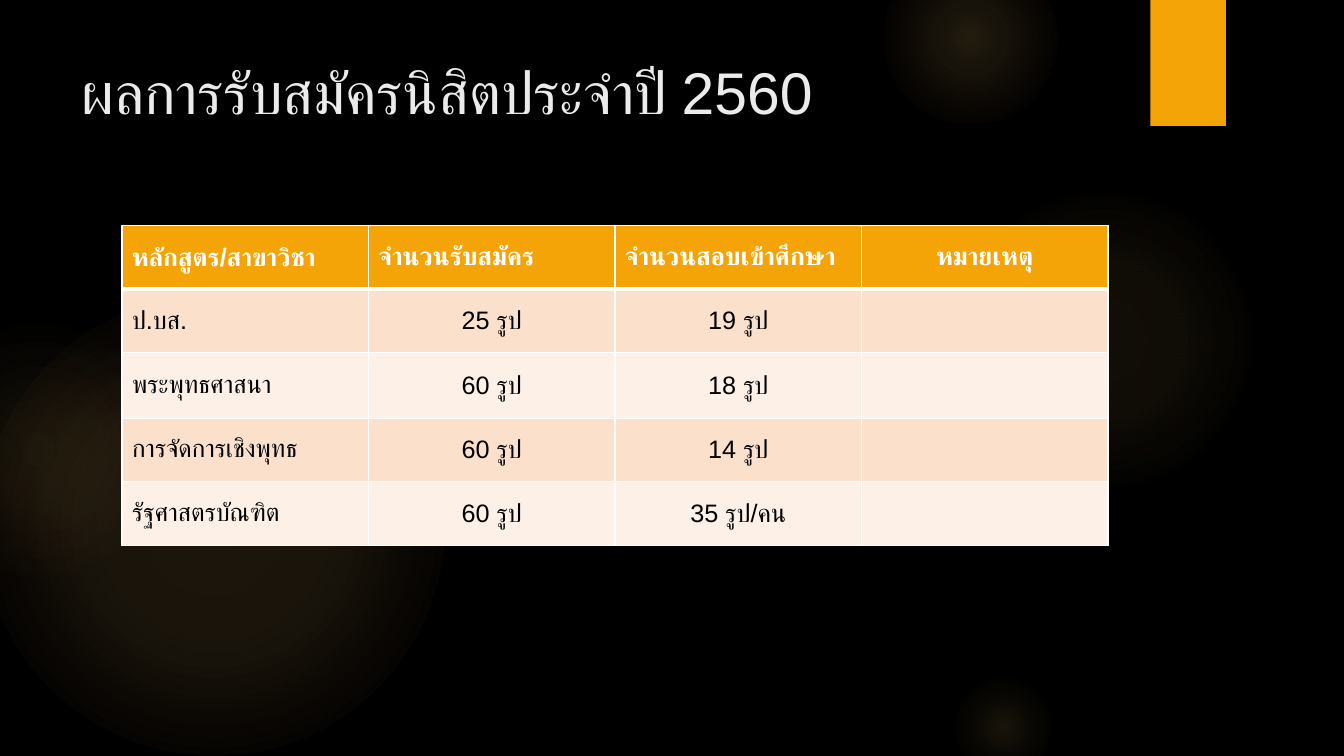
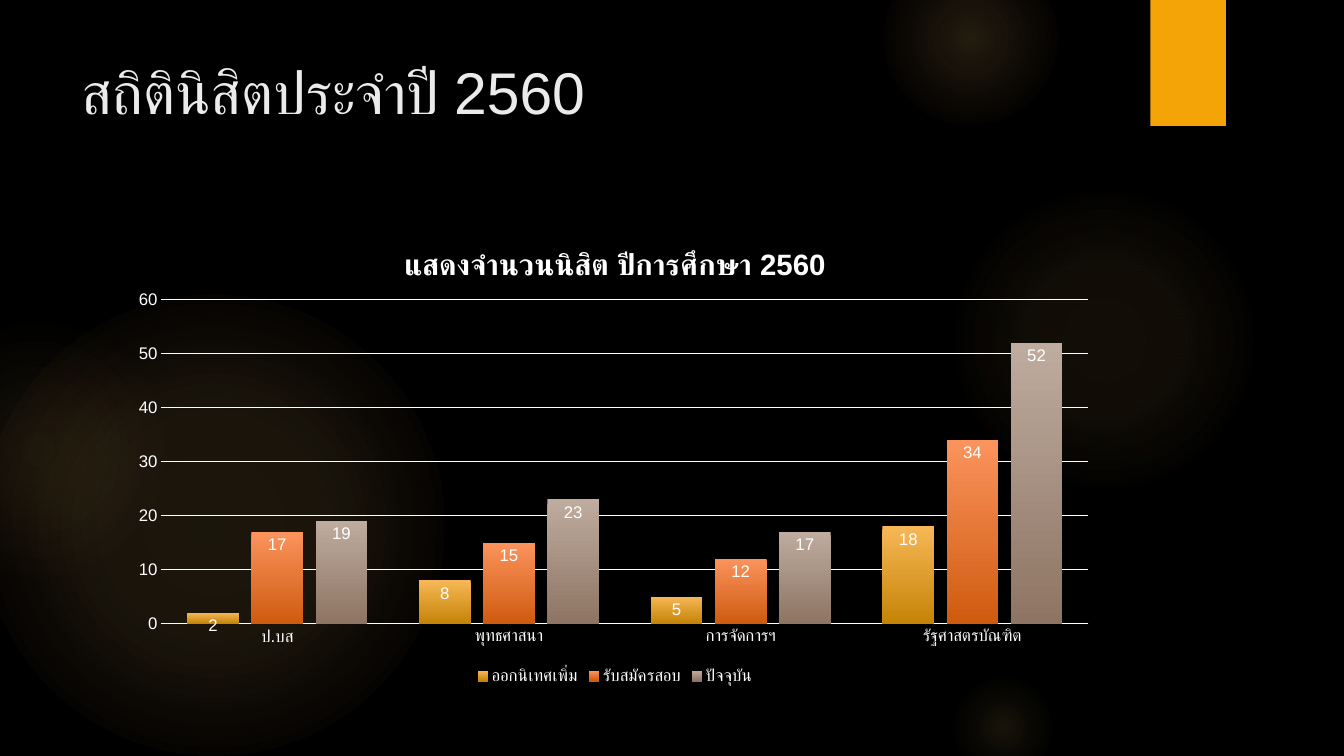
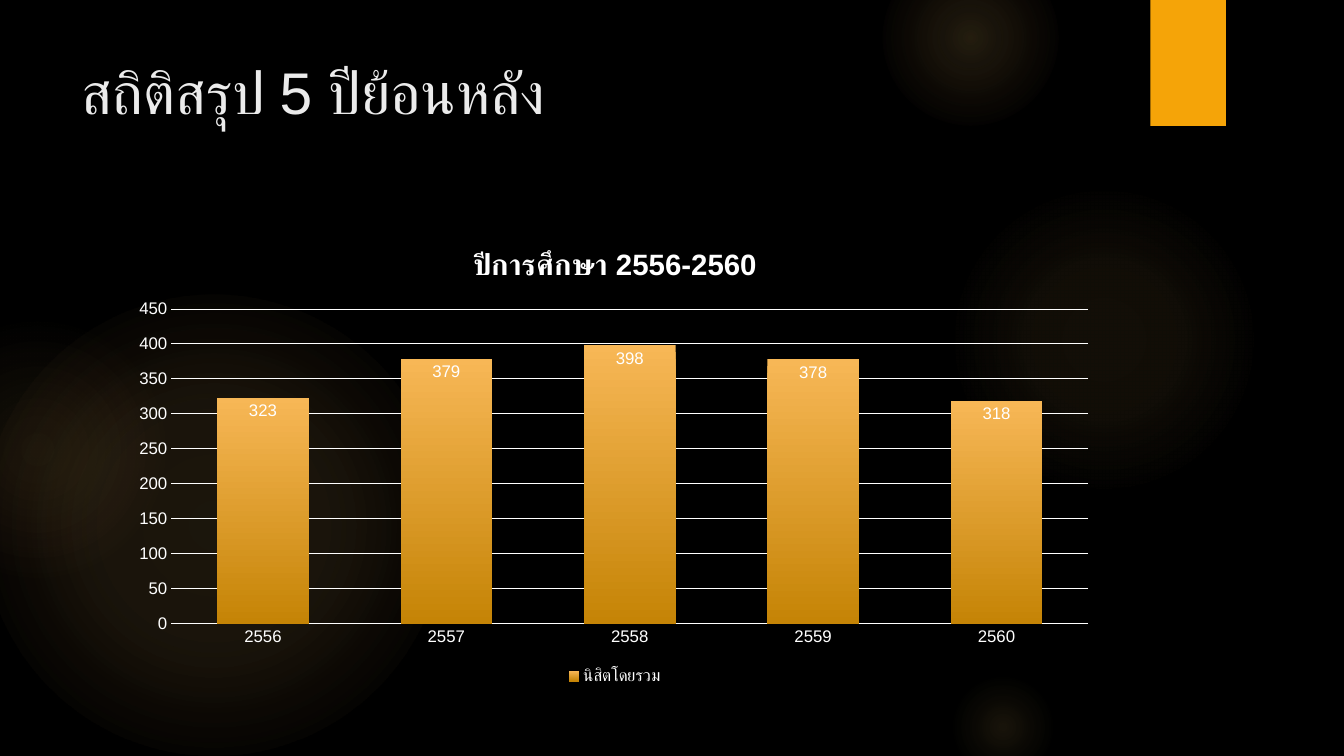
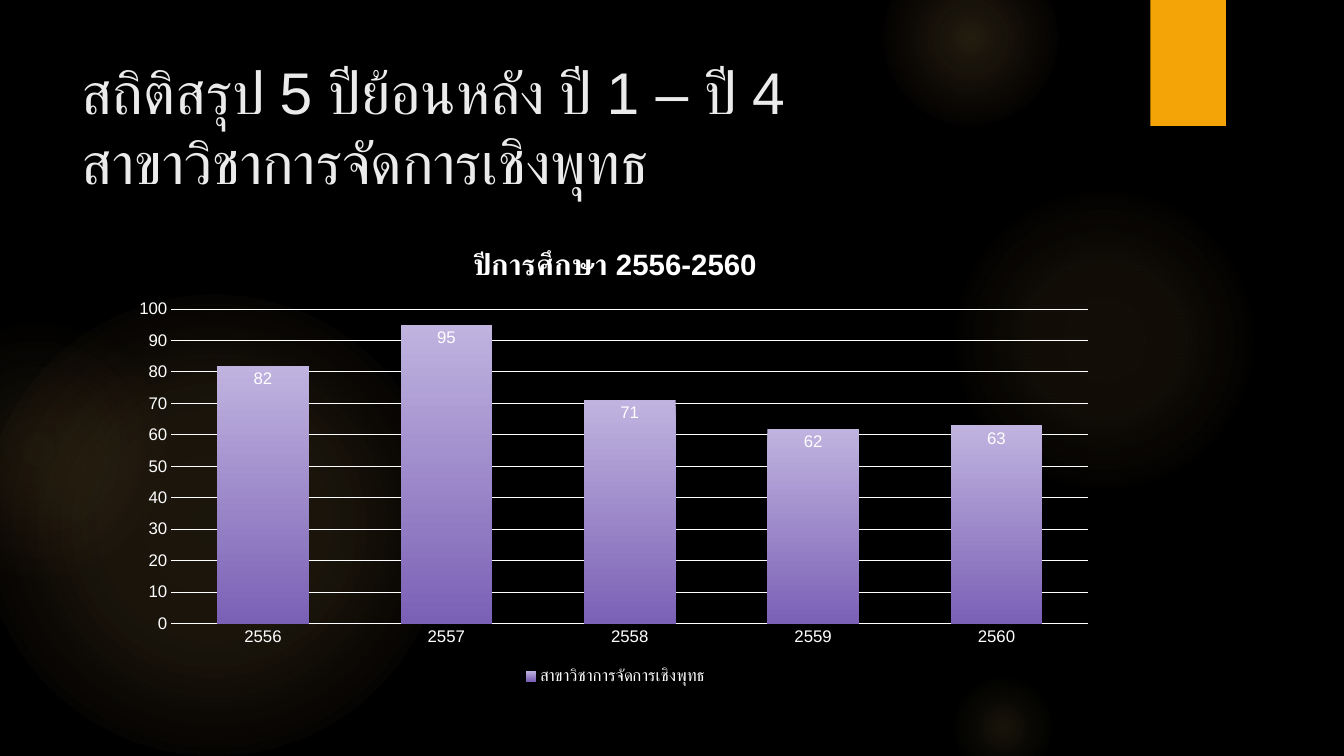
import pptx
import pptx.chart.data
import pptx.dml.color
import pptx.enum.chart
import pptx.enum.shapes
import pptx.enum.text
import pptx.oxml
import pptx.oxml.ns
import pptx.util

Inches = pptx.util.Inches
Pt = pptx.util.Pt
Align = pptx.enum.text.PP_ALIGN
Kind = pptx.enum.shapes.MSO_SHAPE

# Shared look
FONT = "Arial"
WHITE, BLACK, PALE = "FFFFFF", "000000", "EBEBEB"
AMBER, GLOW, CORAL = "F5A408", "FAC96A", "F59B74"
BANDS = ("FBE0CC", "FDF0E7")
GOLD = ("F7B756", "C58406")
ORANGE = ("FB935D", "CF5B0F")
TAUPE = ("BEAC9F", "8E7463")
VIOLET = ("C0B3DF", "7B61B6")
LEFT, TOP, WIDTH = 1.21, 2.24, 9.78

# Left, top, size, then gradient stops of (place, colour, opacity) in percent
GLOWS = [
    (-0.17, 2.92, 4.58, [(0, GLOW, 11), (36, GLOW, 10), (75, GLOW, 0)]),
    (-0.92, 3.17, 2.58, [(0, GLOW, 8), (36, GLOW, 5), (71, CORAL, 0)]),
    (9.41, 1.83, 3.08, [(0, GLOW, 7), (36, GLOW, 6), (69, GLOW, 0)]),
    (8.75, -0.5, 1.75, [(0, GLOW, 14), (36, GLOW, 7), (73, GLOW, 0)]),
    (9.41, 6.67, 1.08, [(0, GLOW, 10), (31, GLOW, 5), (66, GLOW, 0)]),
]


def rgb(code):
    return pptx.dml.color.RGBColor.from_string(code)


def xml(tag, inner, attrs=""):
    space = pptx.oxml.ns.nsdecls(tag.split(":")[0])
    return pptx.oxml.parse_xml(f"<{tag} {space} {attrs}>{inner}</{tag}>")


def style(font, size, color, bold=False):
    font.name, font.size, font.bold = FONT, Pt(size), bold
    font.color.rgb = rgb(color)


def add_run(para, text, size, color, bold=False):
    run = para.add_run()
    run.text = text
    style(run.font, size, color, bold)


# Backdrop, kept on the layout
def add_shape(slide, kind, left, top, width, height):
    shape = slide.shapes.add_shape(
        kind, Inches(left), Inches(top), Inches(width), Inches(height))
    shape.shadow.inherit = False
    shape.line.fill.background()
    return shape


def add_glow(slide, left, top, size, stops):
    shape = add_shape(slide, Kind.OVAL, left, top, size, size)
    shape.fill.background()
    marks = "".join(
        f'<a:gs pos="{place * 1000}"><a:srgbClr val="{color}">'
        f'<a:alpha val="{alpha * 1000}"/></a:srgbClr></a:gs>'
        for place, color, alpha in stops)
    grad = xml("a:gradFill", f'<a:gsLst>{marks}</a:gsLst><a:path path="circle">'
               '<a:fillToRect l="50000" t="50000" r="50000" b="50000"/></a:path>')
    props = shape.element.spPr
    props.replace(props.find(pptx.oxml.ns.qn("a:noFill")), grad)
    return shape


def add_tab(slide):
    shape = add_shape(slide, Kind.RECTANGLE, 11.41, 0, 0.75, 1.25)
    shape.fill.solid()
    shape.fill.fore_color.rgb = rgb(AMBER)
    shade = xml("a:outerShdw", f'<a:srgbClr val="{BLACK}"><a:alpha val="45000"/></a:srgbClr>',
                f'blurRad="{Pt(3)}" dist="{Pt(2)}" dir="5400000"')
    shape.element.spPr.find(pptx.oxml.ns.qn("a:effectLst")).append(shade)
    return shape


def set_base(layout, slide):
    layout.background.fill.solid()
    layout.background.fill.fore_color.rgb = rgb(BLACK)
    parts = [add_glow(slide, *glow) for glow in GLOWS] + [add_tab(slide)]
    for index, part in enumerate(parts):
        part.element.xpath("./p:nvSpPr/p:cNvPr")[0].set("id", str(100 + index))
        layout.shapes.element.insert(2 + index, part.element)


# Title
def add_title(slide, *lines):
    title = slide.shapes.title
    title.left, title.top = Inches(0.71), Inches(0.5)
    title.width, title.height = Inches(10.29), Inches(1.53)
    frame = title.text_frame
    frame.word_wrap = True
    frame.auto_size = pptx.enum.text.MSO_AUTO_SIZE.NONE
    frame.vertical_anchor = pptx.enum.text.MSO_ANCHOR.TOP
    para = frame.paragraphs[0]
    para.alignment = Align.LEFT
    for index, line in enumerate(lines):
        if index:
            para.add_line_break()
        add_run(para, line, 42, PALE)


# Table
def set_edges(cell, top, bottom):
    props = cell._tc.get_or_add_tcPr()
    edges = (("L", 1), ("R", 1), ("T", top), ("B", bottom))
    for index, (side, width) in enumerate(edges):
        line = xml(f"a:ln{side}", f'<a:solidFill><a:srgbClr val="{WHITE}"/></a:solidFill>',
                   f'w="{Pt(width)}"')
        props.insert(index, line)


def add_cell(cell, text, row, align):
    head = row == 0
    cell.fill.solid()
    cell.fill.fore_color.rgb = rgb(AMBER if head else BANDS[(row - 1) % 2])
    cell.vertical_anchor = pptx.enum.text.MSO_ANCHOR.MIDDLE
    set_edges(cell, 3 if row == 1 else 1, 3 if head else 1)
    para = cell.text_frame.paragraphs[0]
    para.alignment = align
    if text:
        add_run(para, text, 18, WHITE if head else BLACK, head)


def add_table(slide, rows, heights):
    count = len(rows[0])
    table = slide.shapes.add_table(
        len(rows), count, Inches(LEFT), Inches(TOP),
        Inches(WIDTH), Inches(sum(heights))).table
    for row, (texts, height) in enumerate(zip(rows, heights)):
        table.rows[row].height = Inches(height)
        flush = count - 1 if row == 0 else 1
        for col, text in enumerate(texts):
            align = Align.LEFT if col < flush else Align.CENTER
            add_cell(table.cell(row, col), text, row, align)


# Chart
def set_plot(chart, box):
    area = chart.element.xpath(".//c:plotArea")[0]
    for old in area.xpath("./c:layout"):
        area.remove(old)
    spots = "".join(f'<c:{key} val="{val}"/>' for key, val in zip("xywh", box))
    area.insert(0, xml(
        "c:layout", '<c:manualLayout><c:layoutTarget val="inner"/>'
        f'<c:xMode val="edge"/><c:yMode val="edge"/>{spots}</c:manualLayout>'))


def set_axes(chart):
    none = pptx.enum.chart.XL_TICK_MARK.NONE
    cat, val = chart.category_axis, chart.value_axis
    for axis in (cat, val):
        axis.major_tick_mark = axis.minor_tick_mark = none
        style(axis.tick_labels.font, 12, WHITE)
    val.has_major_gridlines = True
    for line, width in ((cat.format.line, 1), (val.major_gridlines.format.line, 0.75)):
        line.color.rgb = rgb(WHITE)
        line.width = Pt(width)
    val.format.line.fill.background()


def set_bars(series, colors):
    fill = series.format.fill
    fill.gradient()
    fill.gradient_angle = 270
    for stop, color in zip(fill.gradient_stops, colors):
        stop.color.rgb = rgb(color)
    labels = series.data_labels
    labels.show_value = True
    labels.position = pptx.enum.chart.XL_LABEL_POSITION.INSIDE_END
    style(labels.font, 12, WHITE)


def add_chart(slide, title, cats, bars, box):
    data = pptx.chart.data.CategoryChartData()
    data.categories = cats
    for name, vals, _ in bars:
        data.add_series(name, vals)
    chart = slide.shapes.add_chart(
        pptx.enum.chart.XL_CHART_TYPE.COLUMN_CLUSTERED, Inches(LEFT), Inches(TOP),
        Inches(WIDTH), Inches(4.59), data).chart
    style(chart.font, 10, WHITE)
    chart.has_title = True
    add_run(chart.chart_title.text_frame.paragraphs[0], title, 21, WHITE, True)
    chart.chart_title.include_in_layout = False
    chart.has_legend = True
    chart.legend.position = pptx.enum.chart.XL_LEGEND_POSITION.BOTTOM
    chart.legend.include_in_layout = False
    style(chart.legend.font, 12, WHITE)
    set_axes(chart)
    plot = chart.plots[0]
    plot.gap_width, plot.overlap = 100, -24
    plot.vary_by_categories = False
    for series, (_, _, colors) in zip(plot.series, bars):
        set_bars(series, colors)
    set_plot(chart, box)


def main():
    deck = pptx.Presentation()
    deck.slide_width, deck.slide_height = Inches(13.33), Inches(7.5)
    layout = deck.slide_layouts[5]
    slides = [deck.slides.add_slide(layout) for _ in range(4)]
    set_base(layout, slides[0])
    intake, roll, total, major = slides

    # Intake table
    add_title(intake, "ผลการรับสมัครนิสิตประจำปี 2560")
    add_table(intake, [
        ("หลักสูตร/สาขาวิชา", "จำนวนรับสมัคร", "จำนวนสอบเข้าศึกษา", "หมายเหตุ"),
        ("ป.บส.", "25 รูป", "19 รูป", ""),
        ("พระพุทธศาสนา", "60 รูป", "18 รูป", ""),
        ("การจัดการเชิงพุทธ", "60 รูป", "14 รูป", ""),
        ("รัฐศาสตรบัณฑิต", "60 รูป", "35 รูป/คน", ""),
    ], (0.63, 0.63, 0.65, 0.63, 0.63))

    # Students by programme
    add_title(roll, "สถิตินิสิตประจำปี 2560")
    add_chart(roll, "แสดงจำนวนนิสิต ปีการศึกษา 2560",
              ("ป.บส", "พุทธศาสนา", "การจัดการฯ", "รัฐศาสตรบัณฑิต"), [
                  ("ออกนิเทศเพิ่ม", (2, 8, 5, 18), GOLD),
                  ("รับสมัครสอบ", (17, 15, 12, 34), ORANGE),
                  ("ปัจจุบัน", (19, 23, 17, 52), TAUPE),
              ], (0.04, 0.16, 0.94, 0.7))

    # Five years back
    years = [str(year) for year in range(2556, 2561)]
    span = "ปีการศึกษา 2556-2560"
    box = (0.05, 0.18, 0.93, 0.68)
    add_title(total, "สถิติสรุป 5 ปีย้อนหลัง")
    add_chart(total, span, years,
              [("นิสิตโดยรวม", (323, 379, 398, 378, 318), GOLD)], box)
    add_title(major, "สถิติสรุป 5 ปีย้อนหลัง ปี 1 – ปี 4", "สาขาวิชาการจัดการเชิงพุทธ")
    add_chart(major, span, years,
              [("สาขาวิชาการจัดการเชิงพุทธ", (82, 95, 71, 62, 63), VIOLET)], box)

    deck.save("out.pptx")


if __name__ == "__main__":
    main()
